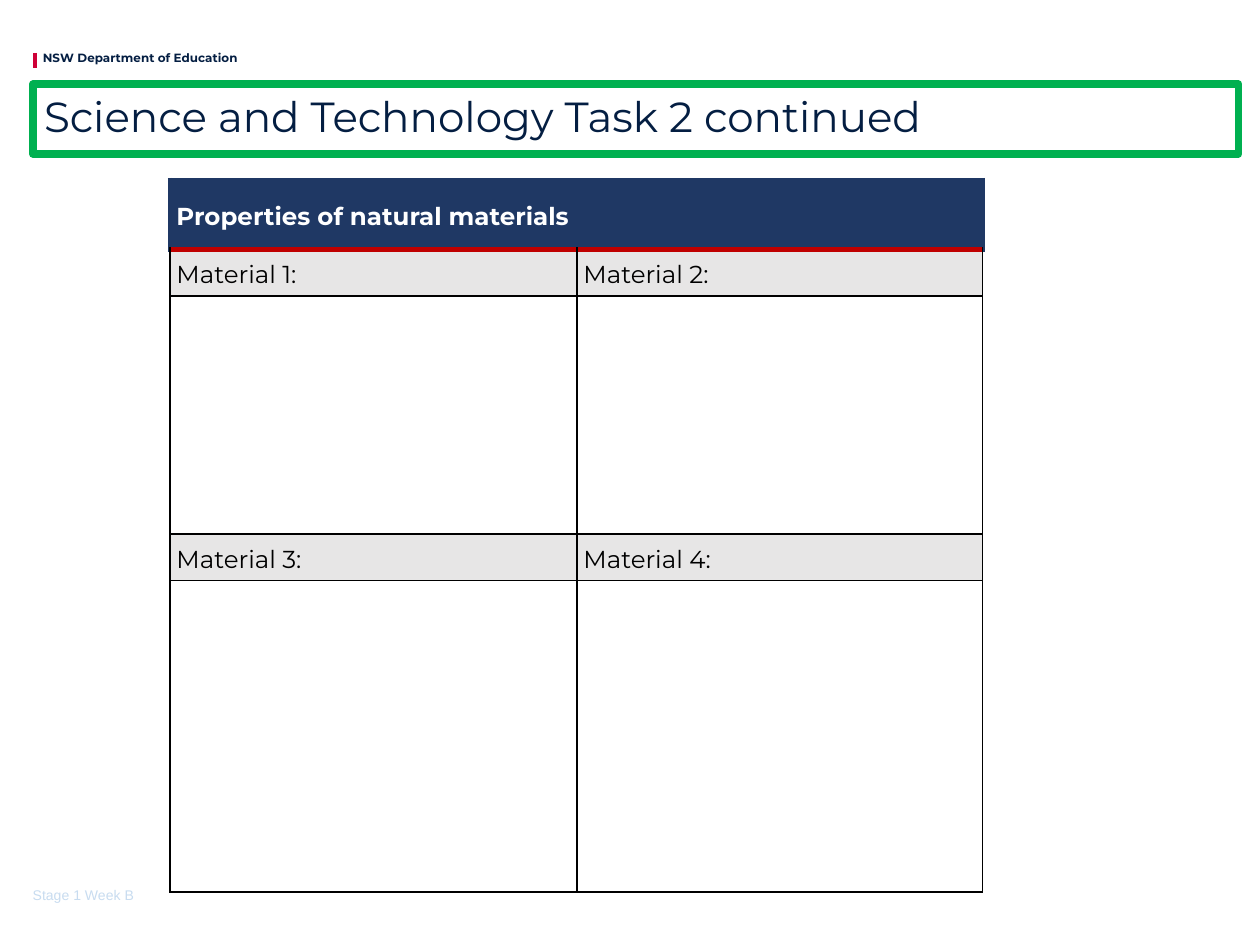
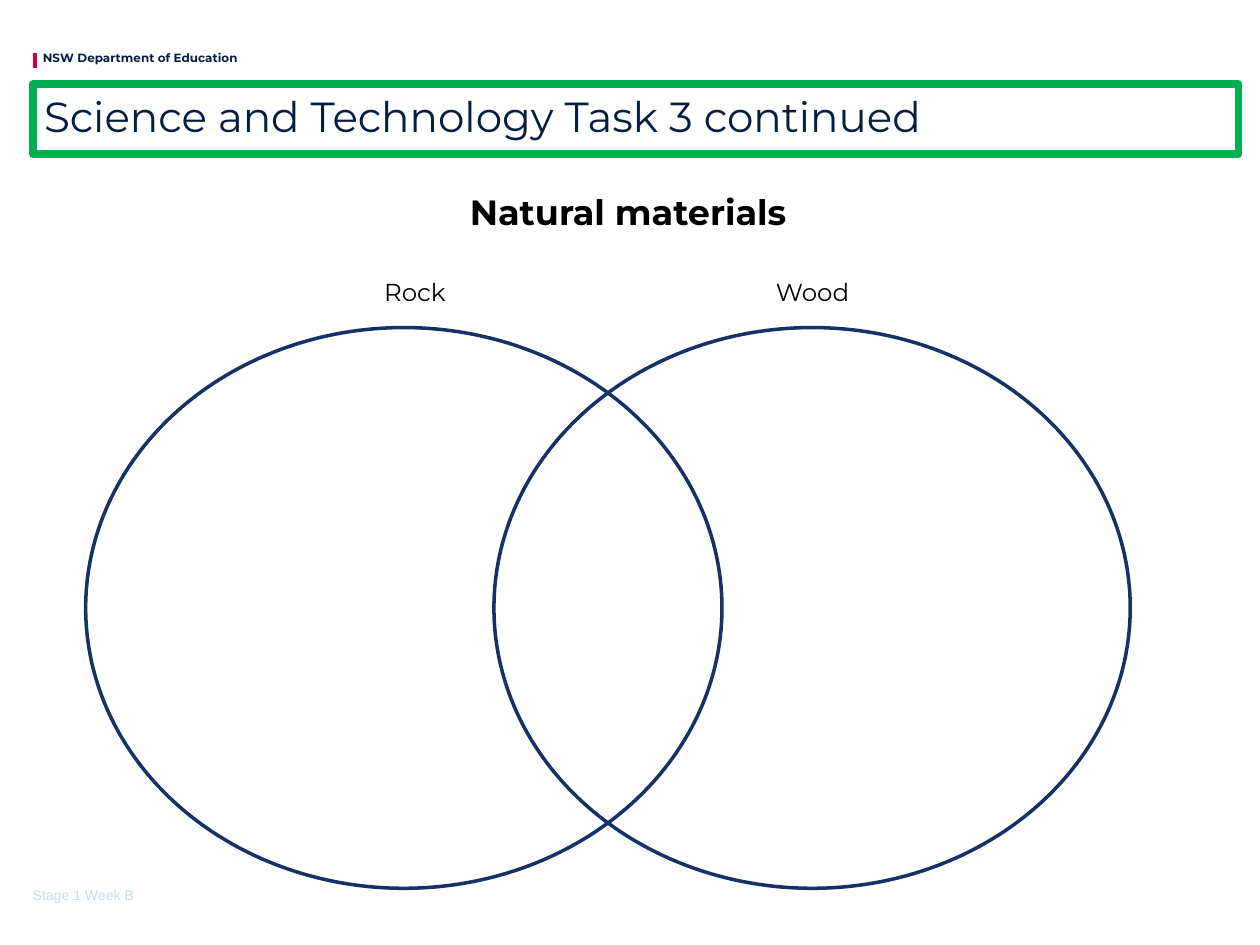
from lxml import etree
from pptx import Presentation
from pptx.dml.color import RGBColor
from pptx.enum.shapes import MSO_CONNECTOR, MSO_SHAPE
from pptx.enum.text import MSO_ANCHOR, MSO_AUTO_SIZE, PP_ALIGN
from pptx.oxml.ns import qn
from pptx.util import Pt

PX = 9144  # 100 px to the inch
STRAIGHT, OVAL = MSO_CONNECTOR.STRAIGHT, MSO_SHAPE.OVAL
TOP, MIDDLE, BOTTOM = MSO_ANCHOR.TOP, MSO_ANCHOR.MIDDLE, MSO_ANCHOR.BOTTOM
NO_FIT, LEFT = MSO_AUTO_SIZE.NONE, PP_ALIGN.LEFT

NAVY = RGBColor(0x04, 0x1E, 0x42)
CRIMSON = RGBColor(0xCE, 0x00, 0x37)
GREEN = RGBColor(0x00, 0xB0, 0x50)
PALE_BLUE = RGBColor(0xC8, 0xDC, 0xF0)
HEADER_BLUE = RGBColor(0x1F, 0x38, 0x64)
HEADER_RED = RGBColor(0xC0, 0x00, 0x00)
LABEL_GREY = RGBColor(0xE7, 0xE6, 0xE6)
CIRCLE_BLUE = RGBColor(0x15, 0x31, 0x66)
BLACK = RGBColor(0x00, 0x00, 0x00)
WHITE = RGBColor(0xFF, 0xFF, 0xFF)


def write(frame, text, size, color, bold=False, font="Montserrat"):
    para = frame.paragraphs[0]
    para.alignment = LEFT
    span = para.add_run()
    span.text = text
    span.font.name = font
    span.font.size = Pt(size)
    span.font.bold = bold
    span.font.color.rgb = color
    return para


def add_text(slide, place, text, size, color, bold=False, font="Montserrat",
             anchor=TOP, inset=(0, 0)):
    box = slide.shapes.add_textbox(*[n * PX for n in place])
    frame = box.text_frame
    frame.word_wrap = True
    frame.vertical_anchor = anchor
    frame.margin_left = frame.margin_right = inset[0] * PX
    frame.margin_top = frame.margin_bottom = inset[1] * PX
    write(frame, text, size, color, bold, font)


deck = Presentation()
deck.slide_width, deck.slide_height = 1000 * PX, 750 * PX
title_only = deck.slide_layouts[5]

# Shared header, title band and footer
for task in (2, 3):
    slide = deck.slides.add_slide(title_only)

    bar = slide.shapes.add_connector(STRAIGHT, 28 * PX, 42 * PX, 28 * PX, 54 * PX)
    bar.line.color.rgb = CRIMSON
    bar.line.width = Pt(2.5)
    etree.SubElement(bar._element.spPr, qn("a:effectLst"))
    add_text(slide, (34, 40, 203, 11), "NSW Department of Education", 6.8, NAVY, bold=True)

    title = slide.shapes.title
    title.left, title.top, title.width, title.height = [n * PX for n in (26, 67, 957, 55)]
    title.line.color.rgb = GREEN
    title.line.width = Pt(4.5)
    frame = title.text_frame
    frame.auto_size = NO_FIT
    frame.vertical_anchor = MIDDLE
    frame.margin_left = 9 * PX
    frame.margin_top = frame.margin_right = frame.margin_bottom = 0
    para = write(frame, f"Science and Technology Task {task} continued", 24, NAVY)
    para.line_spacing = 0.9

    add_text(slide, (26, 677, 100, 40), "Stage 1 Week B", 8, PALE_BLUE,
             font="Arial", anchor=BOTTOM)

table_slide, venn_slide = deck.slides

# Table of material properties
row_heights = (55, 37, 189, 37, 247)
column_widths = (323, 322)
row_texts = (("Properties of natural materials", ""),
             ("Material 1:", "Material 2:"), ("", ""),
             ("Material 3:", "Material 4:"), ("", ""))
table = table_slide.shapes.add_table(
    len(row_heights), len(column_widths), 135 * PX, 143 * PX,
    sum(column_widths) * PX, sum(row_heights) * PX).table
for column, width in zip(table.columns, column_widths):
    column.width = width * PX

for row_index, (row, height, texts) in enumerate(zip(table.rows, row_heights, row_texts)):
    row.height = height * PX
    is_header = row_index == 0
    edges = dict.fromkeys(("lnL", "lnR", "lnT", "lnB"), (BLACK, 1))
    if is_header:
        edges = dict.fromkeys(edges, (HEADER_BLUE, 3))
        edges["lnB"] = (HEADER_RED, 3)
    elif row_index == 1:
        edges["lnT"] = (HEADER_RED, 3)

    for cell, text in zip(row.cells, texts):
        properties = cell._tc.get_or_add_tcPr()
        for edge, (color, points) in edges.items():
            border = etree.SubElement(properties, qn("a:" + edge), w=str(Pt(points)))
            fill = etree.SubElement(border, qn("a:solidFill"))
            etree.SubElement(fill, qn("a:srgbClr"), val=str(color))
        cell.vertical_anchor = MIDDLE
        cell.margin_left = cell.margin_right = 5 * PX
        cell.margin_top = cell.margin_bottom = 0
        if is_header or text:
            cell.fill.solid()
            cell.fill.fore_color.rgb = HEADER_BLUE if is_header else LABEL_GREY
        else:
            cell.fill.background()
        if text:
            para = write(cell.text_frame, text, 14, WHITE if is_header else BLACK, is_header)
            para.line_spacing = 1.15
table.cell(0, 0).merge(table.cell(0, 1))

# Venn diagram of two materials
add_text(venn_slide, (363, 146, 282, 44), "Natural materials", 20, BLACK,
         bold=True, inset=(10, 5))
venn = venn_slide.shapes.add_group_shape()
for left in (68, 392):
    circle = venn.shapes.add_shape(OVAL, left * PX, 260 * PX, 505 * PX, 445 * PX)
    circle.shadow.inherit = False
    circle.fill.background()
    circle.line.color.rgb = CIRCLE_BLUE
    circle.line.width = Pt(2)
for name, left, width in (("Rock", 295, 71), ("Wood", 606, 87)):
    add_text(venn_slide, (left, 215, width, 34), name, 14, BLACK, inset=(10, 5))

deck.save("out.pptx")
